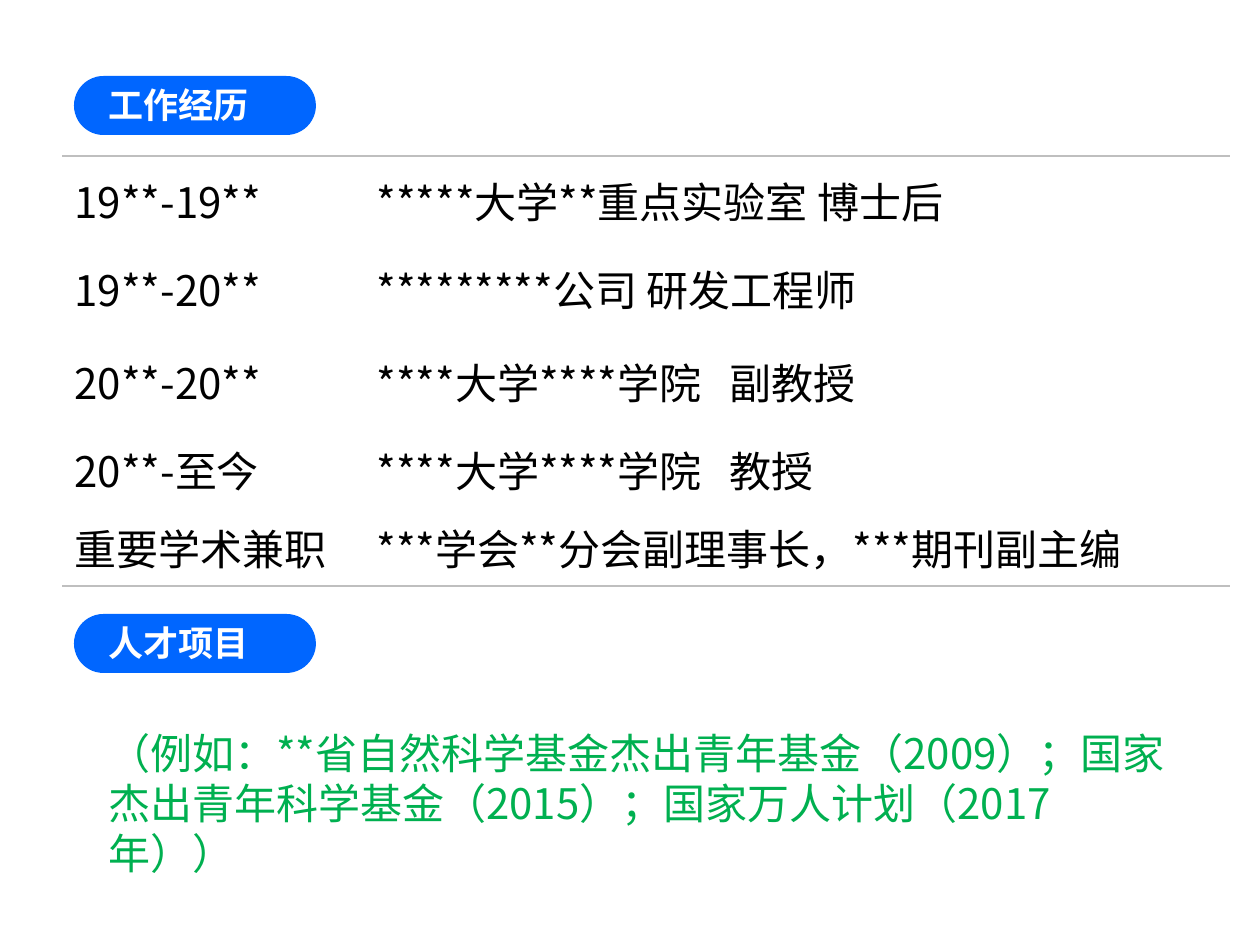
from lxml import etree
from pptx import Presentation
from pptx.dml.color import RGBColor
from pptx.enum.shapes import MSO_SHAPE
from pptx.enum.text import MSO_ANCHOR, MSO_AUTO_SIZE, PP_ALIGN
from pptx.oxml.ns import qn
from pptx.util import Emu, Pt

ROUNDED, RECT = MSO_SHAPE.ROUNDED_RECTANGLE, MSO_SHAPE.RECTANGLE
MIDDLE, CENTER = MSO_ANCHOR.MIDDLE, PP_ALIGN.CENTER
GROW = MSO_AUTO_SIZE.SHAPE_TO_FIT_TEXT

FONT = "Noto Sans CJK SC"
BLUE = RGBColor(0x00, 0x66, 0xFF)
GREEN = RGBColor(0x00, 0xB0, 0x50)
GREY = RGBColor(0xBF, 0xBF, 0xBF)
BLACK = RGBColor(0, 0, 0)
WHITE = RGBColor(0xFF, 0xFF, 0xFF)

HEADINGS = [("工作经历", 76), ("人才项目", 614)]  # text, top
CAREER = [
    ("19**-19**", "*****大学**重点实验室 博士后", 88),  # period, post, row height
    ("19**-20**", "*********公司 研发工程师", 89),
    ("20**-20**", "****大学****学院   副教授", 97),
    ("20**-至今", "****大学****学院   教授", 78),
    ("重要学术兼职", "***学会**分会副理事长，***期刊副主编", 78),
]
COLUMNS = [302, 866]
TALENT = ("（例如：**省自然科学基金杰出青年基金（2009）；"
          "国家杰出青年科学基金（2015）；国家万人计划（2017年））")


def px(n):
    return Emu(round(n * 914400 / 126))


def box(*lengths):
    return [px(n) for n in lengths]


def write(tf, text, size, color, bold=False):
    r = tf.paragraphs[0].add_run()
    r.text = text
    r.font.size, r.font.bold, r.font.name = Pt(size), bold, FONT
    r.font.color.rgb = color
    ea = etree.SubElement(r.font._element, qn("a:ea"))
    ea.set("typeface", FONT)


def add_border(cell, side):
    """Draw a 1 pt grey line on one side, "T" or "B"."""
    ln = etree.Element(qn(f"a:ln{side}"), w=str(Pt(1)))
    fill = etree.SubElement(ln, qn("a:solidFill"))
    etree.SubElement(fill, qn("a:srgbClr"), val=str(GREY))
    cell._tc.get_or_add_tcPr().insert(0, ln)


def add_blue(group, kind, *place):
    sp = group.shapes.add_shape(kind, *box(*place))
    sp.shadow.inherit = False
    sp.fill.solid()
    sp.fill.fore_color.rgb = BLUE
    sp.line.fill.background()
    return sp


def add_heading(slide, text, top):
    group = slide.shapes.add_group_shape()
    pill = add_blue(group, ROUNDED, 74, top, 242, 59)
    pill.adjustments[0] = 0.5
    tf = add_blue(group, RECT, 96, top + 1, 166, 55).text_frame
    tf.word_wrap = False
    tf.vertical_anchor = MIDDLE
    tf.paragraphs[0].alignment = CENTER
    write(tf, text, 20, WHITE, True)


def add_career(slide):
    heights = [row[2] for row in CAREER]
    frame = slide.shapes.add_table(len(CAREER), len(COLUMNS),
                                   *box(62, 156, sum(COLUMNS), sum(heights)))
    table = frame.table
    table.first_row = table.horz_banding = False
    for column, width in zip(table.columns, COLUMNS):
        column.width = px(width)
    for i, (period, post, height) in enumerate(CAREER):
        table.rows[i].height = px(height)
        for cell, text in zip(table.rows[i].cells, (period, post)):
            cell.fill.background()
            cell.vertical_anchor = MIDDLE
            write(cell.text_frame, text, 24, BLACK)
            if i == 0:
                add_border(cell, "T")
            elif i == len(CAREER) - 1:
                add_border(cell, "B")
    # "No Style, No Grid": only the outer rules show
    style = frame._element.find(".//" + qn("a:tableStyleId"))
    style.text = "{2D5ABB26-0587-4C30-8999-92F81FD0307C}"


def main():
    prs = Presentation()
    prs.slide_width, prs.slide_height = box(1260, 945)
    slide = prs.slides.add_slide(prs.slide_layouts[6])
    add_career(slide)
    for text, top in HEADINGS:
        add_heading(slide, text, top)
    tf = slide.shapes.add_textbox(*box(96, 721, 1082, 115)).text_frame
    tf.word_wrap = True
    tf.auto_size = GROW
    write(tf, TALENT, 24, GREEN)
    prs.save("out.pptx")


if __name__ == "__main__":
    main()
